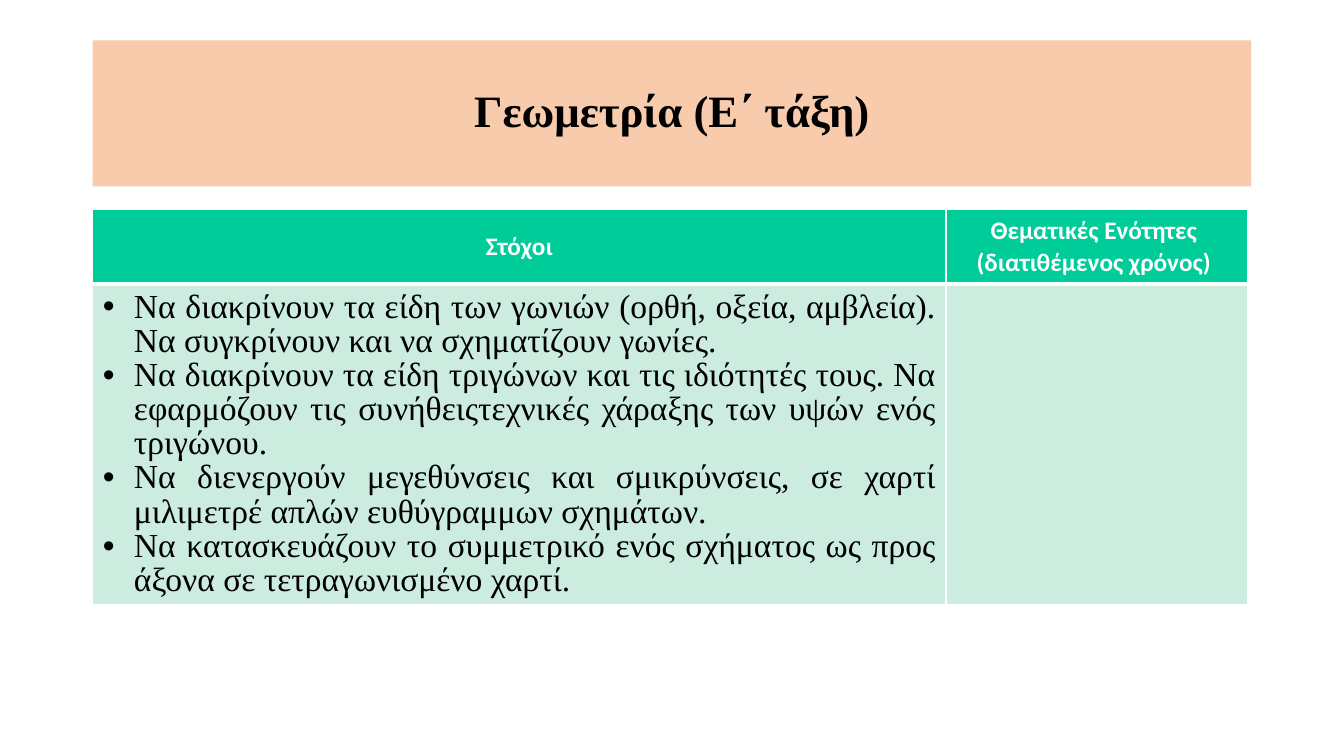
import dataclasses

import lxml.etree
import pptx
import pptx.dml.color
import pptx.enum.shapes
import pptx.enum.text
import pptx.oxml.ns
import pptx.util

PX = 9144  # EMU in one px, 100 px to the inch
ALIGN = pptx.enum.text.PP_ALIGN
MIDDLE = pptx.enum.text.MSO_ANCHOR.MIDDLE
TOP = pptx.enum.text.MSO_ANCHOR.TOP

TITLE = "Γεωμετρία (Ε΄ τάξη)"
HEADERS = [["Στόχοι"], ["Θεματικές Ενότητες ", "(διατιθέμενος χρόνος) "]]
GOALS = [
    "Να διακρίνουν τα είδη των γωνιών (ορθή, οξεία, αμβλεία). "
    "Να συγκρίνουν και να σχηματίζουν γωνίες.",
    "Να διακρίνουν τα είδη τριγώνων και τις ιδιότητές τους. "
    "Να εφαρμόζουν τις συνήθειςτεχνικές χάραξης των υψών ενός τριγώνου.",
    "Να διενεργούν μεγεθύνσεις και σμικρύνσεις, σε χαρτί μιλιμετρέ "
    "απλών ευθύγραμμων σχημάτων.",
    "Να κατασκευάζουν το συμμετρικό ενός σχήματος ως προς άξονα "
    "σε τετραγωνισμένο χαρτί.",
]


@dataclasses.dataclass(frozen=True)
class TextStyle:
    font: str
    size: int
    color: str
    bold: bool
    align: ALIGN
    spacing: float


@dataclasses.dataclass(frozen=True)
class Theme:
    banner: str = "F8CBAD"
    header_fill: str = "00CC99"
    body_fill: str = "CBECDE"
    border: str = "FFFFFF"
    thin: float = 0.91
    thick: float = 2.95
    title: TextStyle = TextStyle("Times New Roman", 32, "000000", True, ALIGN.CENTER, 0.9)
    header: TextStyle = TextStyle("Calibri", 18, "FFFFFF", True, ALIGN.CENTER, 1.04)
    goal: TextStyle = TextStyle("Times New Roman", 24, "000000", False, ALIGN.JUSTIFY, 0.92)


THEME = Theme()


def px(*lengths):
    return [pptx.util.Emu(n * PX) for n in lengths]


def set_fill(target, color):
    target.fill.solid()
    target.fill.fore_color.rgb = pptx.dml.color.RGBColor.from_string(color)


def add_child(parent, tag, **attributes):
    return lxml.etree.SubElement(parent, pptx.oxml.ns.qn(tag), **attributes)


def add_bullet(p, indent):
    pPr = p._p.get_or_add_pPr()
    pPr.set("marL", str(indent * PX))
    pPr.set("indent", str(-indent * PX))
    add_child(pPr, "a:buFont", typeface="Arial")
    add_child(pPr, "a:buChar", char="•")


def write(tf, lines, style, bullet_indent=0):
    for i, line in enumerate(lines):
        p = tf.add_paragraph() if i else tf.paragraphs[0]
        p.alignment = style.align
        p.line_spacing = style.spacing
        if bullet_indent:
            add_bullet(p, bullet_indent)
        r = p.add_run()
        r.text = line
        r.font.name = style.font
        r.font.size = pptx.util.Pt(style.size)
        r.font.bold = style.bold
        r.font.color.rgb = pptx.dml.color.RGBColor.from_string(style.color)


def format_cell(cell, fill, anchor, margin_top, top, bottom):
    """Set margins, borders and fill; top and bottom are border widths in points."""
    cell.margin_left, cell.margin_top, cell.margin_right, cell.margin_bottom = px(
        10, margin_top, 10, 5)
    cell.vertical_anchor = anchor
    tcPr = cell._tc.get_or_add_tcPr()
    widths = {"a:lnL": THEME.thin, "a:lnR": THEME.thin, "a:lnT": top, "a:lnB": bottom}
    for tag, width in widths.items():
        ln = add_child(tcPr, tag, w=str(int(pptx.util.Pt(width))))
        add_child(add_child(ln, "a:solidFill"), "a:srgbClr", val=THEME.border)
    set_fill(cell, fill)


def add_banner(slide, x, y, w, h):
    sp = slide.shapes.add_shape(pptx.enum.shapes.MSO_SHAPE.RECTANGLE, *px(x, y, w, h))
    sp.shadow.inherit = False
    set_fill(sp, THEME.banner)
    sp.line.fill.background()
    tf = sp.text_frame
    tf.word_wrap = True
    tf.vertical_anchor = MIDDLE
    write(tf, [TITLE], THEME.title)


def add_goals_table(slide, x, y, w, h):
    header_h, goals_w = 73, 847
    table = slide.shapes.add_table(2, 2, *px(x, y, w, h)).table
    table.horz_banding = False
    for column, width in zip(table.columns, px(goals_w, w - goals_w)):
        column.width = width
    for row, height in zip(table.rows, px(header_h, h - header_h)):
        row.height = height
    for i, lines in enumerate(HEADERS):
        header, body = table.cell(0, i), table.cell(1, i)
        format_cell(header, THEME.header_fill, MIDDLE, 5, THEME.thin, THEME.thick)
        format_cell(body, THEME.body_fill, TOP, 7, THEME.thick, THEME.thin)
        write(header.text_frame, lines, THEME.header)
    write(table.cell(1, 0).text_frame, GOALS, THEME.goal, bullet_indent=31)


def main():
    prs = pptx.Presentation()
    prs.slide_width, prs.slide_height = px(1334, 750)
    slide = prs.slides.add_slide(prs.slide_layouts[6])
    add_banner(slide, 92, 40, 1150, 145)
    add_goals_table(slide, 92, 208, 1146, 391)
    prs.save("out.pptx")


if __name__ == "__main__":
    main()
